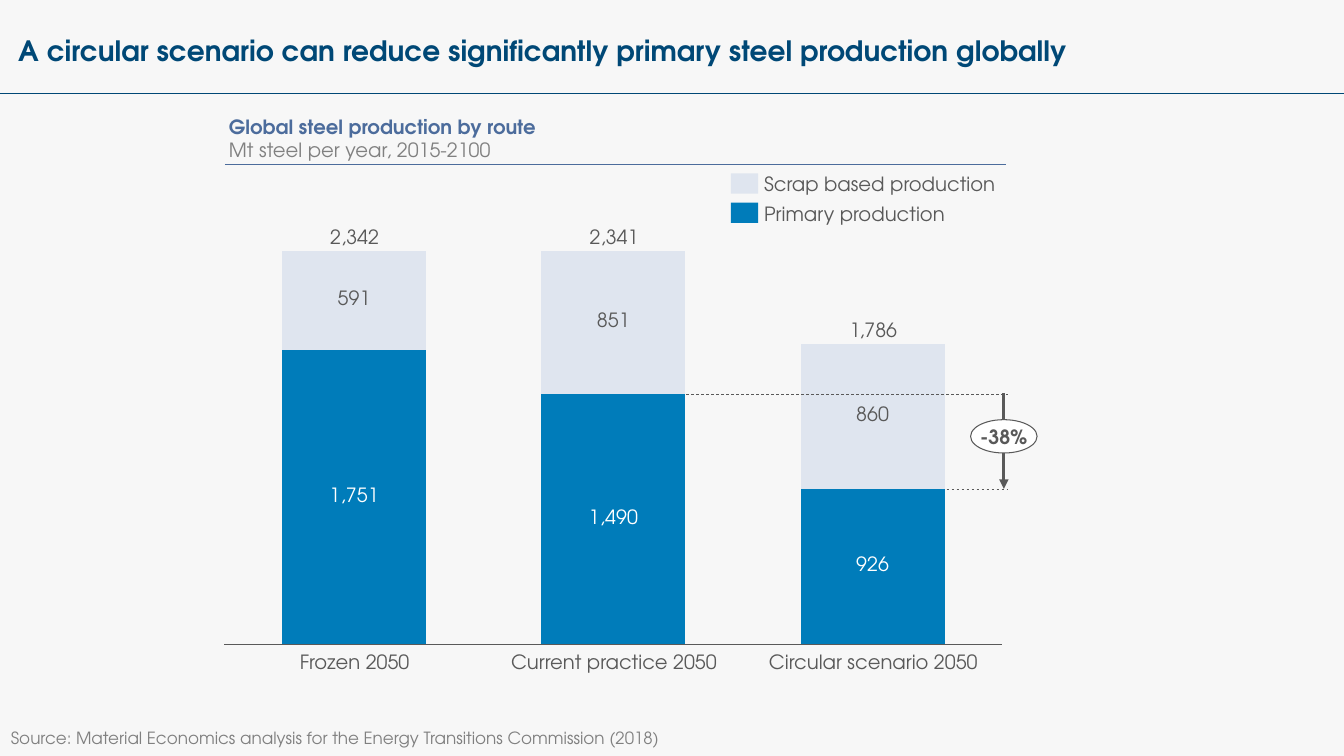
from lxml import etree
from pptx import Presentation
from pptx.chart.data import CategoryChartData
from pptx.dml.color import RGBColor
from pptx.enum.chart import XL_CHART_TYPE, XL_LABEL_POSITION, XL_TICK_LABEL_POSITION, XL_TICK_MARK
from pptx.enum.dml import MSO_LINE
from pptx.enum.shapes import MSO_CONNECTOR, MSO_SHAPE
from pptx.enum.text import MSO_ANCHOR, MSO_AUTO_SIZE, PP_ALIGN
from pptx.oxml import parse_xml
from pptx.oxml.ns import nsdecls, qn
from pptx.util import Pt

FONT = "TeX Gyre Adventor"
NAVY = RGBColor(0x00, 0x48, 0x76)
SLATE = RGBColor(0x4C, 0x6C, 0x9C)
BLUE = RGBColor(0x00, 0x7C, 0xBA)
PALE = RGBColor(0xDF, 0xE5, 0xEF)
DARK = RGBColor(0x59, 0x59, 0x59)
GREY = RGBColor(0x80, 0x80, 0x80)
WHITE = RGBColor(0xFF, 0xFF, 0xFF)
PAPER = RGBColor(0xF7, 0xF7, 0xF7)
LEFT, CENTER = PP_ALIGN.LEFT, PP_ALIGN.CENTER
TOP, MIDDLE, BOTTOM = MSO_ANCHOR.TOP, MSO_ANCHOR.MIDDLE, MSO_ANCHOR.BOTTOM
NO_TICK = XL_TICK_MARK.NONE

deck = Presentation()
deck.slide_width, deck.slide_height = Pt(960), Pt(540)
page = deck.slides.add_slide(deck.slide_layouts[5])
page.background.fill.solid()
page.background.fill.fore_color.rgb = PAPER


def write(shape, lines, size=14, align=LEFT, anchor=TOP, wrap=False, inset=(0, 0)):
    """Fill a shape with lines, each given as (text, colour, bold)."""
    frame = shape.text_frame
    frame.auto_size = MSO_AUTO_SIZE.NONE
    frame.word_wrap = wrap
    frame.vertical_anchor = anchor
    frame.margin_left = frame.margin_right = Pt(inset[0])
    frame.margin_top = frame.margin_bottom = Pt(inset[1])
    for index, (text, color, bold) in enumerate(lines):
        para = frame.add_paragraph() if index else frame.paragraphs[0]
        para.text = text
        para.alignment = align
        para.font.name, para.font.size = FONT, Pt(size)
        para.font.color.rgb, para.font.bold = color, bold


def draw_line(x1, y1, x2, y2, color, width):
    line = page.shapes.add_connector(MSO_CONNECTOR.STRAIGHT, Pt(x1), Pt(y1), Pt(x2), Pt(y2))
    line.line.color.rgb = color
    line.line.width = Pt(width)
    etree.SubElement(line._element.spPr, qn("a:effectLst"))
    return line


# Title, heading and source
title = page.shapes.title
title.left, title.top, title.width, title.height = Pt(13), Pt(23.8), Pt(934), Pt(24.5)
write(title, [("A circular scenario can reduce significantly primary steel production globally",
               NAVY, True)], size=20, wrap=True)
draw_line(0, 67, 960, 67, NAVY, 0.75)

heading = page.shapes.add_textbox(Pt(163.5), Pt(81.4), Pt(558), Pt(34))
write(heading, [("Global steel production by route", SLATE, True),
                ("Mt steel per year, 2015-2100", GREY, False)], anchor=BOTTOM, wrap=True)
draw_line(160.6, 117.6, 718.6, 117.6, SLATE, 0.75)

source = page.shapes.add_textbox(Pt(0.7), Pt(516.2), Pt(927), Pt(21.6))
write(source, [("Source: Material Economics analysis for the Energy Transitions Commission (2018)",
                GREY, False)], size=12, wrap=True, inset=(7.2, 3.6))

# Stacked columns
scenarios = ["Frozen 2050", "Current practice 2050", "Circular scenario 2050"]
routes = [("Primary production", (1751, 1490, 926), BLUE, WHITE),
          ("Scrap based production", (591, 851, 860), PALE, DARK)]
data = CategoryChartData(number_format="#,##0")
data.categories = scenarios
for name, values, _, _ in routes:
    data.add_series(name, values)
chart = page.shapes.add_chart(XL_CHART_TYPE.COLUMN_STACKED, Pt(154.1), Pt(172.8),
                              Pt(568.8), Pt(293.8), data).chart
chart.has_legend = chart.has_title = False
chart.font.name, chart.font.size, chart.font.color.rgb = FONT, Pt(14), DARK

value_axis = chart.value_axis
value_axis.minimum_scale, value_axis.maximum_scale = 0, 2342
value_axis.has_major_gridlines = value_axis.visible = False
category_axis = chart.category_axis
category_axis.tick_label_position = XL_TICK_LABEL_POSITION.NONE
category_axis.major_tick_mark = category_axis.minor_tick_mark = NO_TICK
category_axis.format.line.color.rgb = DARK
category_axis.format.line.width = Pt(0.75)

plot = chart.plots[0]
plot.gap_width, plot.overlap, plot.vary_by_categories = 80, 100, False
for series, (_, _, fill, ink) in zip(plot.series, routes):
    series.format.fill.solid()
    series.format.fill.fore_color.rgb = fill
    labels = series.data_labels
    labels.show_value = True
    labels.number_format, labels.number_format_is_linked = "#,##0", False
    labels.position = XL_LABEL_POSITION.CENTER
    labels.font.name, labels.font.size, labels.font.color.rgb = FONT, Pt(14), ink

plot_area = chart._chartSpace.chart.plotArea
for old_layout in plot_area.findall(qn("c:layout")):
    plot_area.remove(old_layout)
plot_area.insert(0, parse_xml(
    f'<c:layout {nsdecls("c")}><c:manualLayout><c:layoutTarget val="inner"/>'
    '<c:xMode val="edge"/><c:yMode val="edge"/><c:x val="0.011"/><c:y val="0.022"/>'
    '<c:w val="0.977"/><c:h val="0.956"/></c:manualLayout></c:layout>'))

# Totals above and scenario names below the columns
columns = zip(scenarios, ("2,342", "2,341", "1,786"), (160.6, 160.6, 226.8), (80, 148, 150))
for index, (scenario, total, total_top, name_width) in enumerate(columns):
    center = 253.3 + index * 185.3
    total_box = page.shapes.add_textbox(Pt(center - 19.5), Pt(total_top), Pt(39), Pt(16.8))
    write(total_box, [(total, DARK, False)], align=CENTER, anchor=BOTTOM)
    name_box = page.shapes.add_textbox(Pt(center - name_width / 2), Pt(464.4),
                                       Pt(name_width), Pt(16.8))
    write(name_box, [(scenario, DARK, False)], align=CENTER)

# Change in primary production
for start, level in ((490.3, 281.5), (676.1, 349.2)):
    draw_line(start, level, 720, level, DARK, 0.5).line.dash_style = MSO_LINE.DASH
arrow = draw_line(717.1, 281, 717.1, 349.2, DARK, 2.25)
etree.SubElement(arrow.line._get_or_add_ln(), qn("a:tailEnd"), type="triangle")
bubble = page.shapes.add_shape(MSO_SHAPE.OVAL, Pt(693.3), Pt(299.8), Pt(47.5), Pt(23.8))
bubble.shadow.inherit = False
bubble.fill.solid()
bubble.fill.fore_color.rgb = WHITE
bubble.line.color.rgb, bubble.line.width = DARK, Pt(0.75)
write(bubble, [("-38%", DARK, True)], align=CENTER, anchor=MIDDLE)

# Legend, in stacking order
for index, (name, _, fill, _) in enumerate(reversed(routes)):
    top = 123.8 + index * 20.9
    swatch = page.shapes.add_shape(MSO_SHAPE.RECTANGLE, Pt(522), Pt(top), Pt(19.5), Pt(14.5))
    swatch.shadow.inherit = False
    swatch.fill.solid()
    swatch.fill.fore_color.rgb = fill
    swatch.line.fill.background()
    legend_box = page.shapes.add_textbox(Pt(545.8), Pt(top - 0.7), Pt(166), Pt(16.8))
    write(legend_box, [(name, DARK, False)], anchor=MIDDLE, wrap=True)

deck.save("out.pptx")
